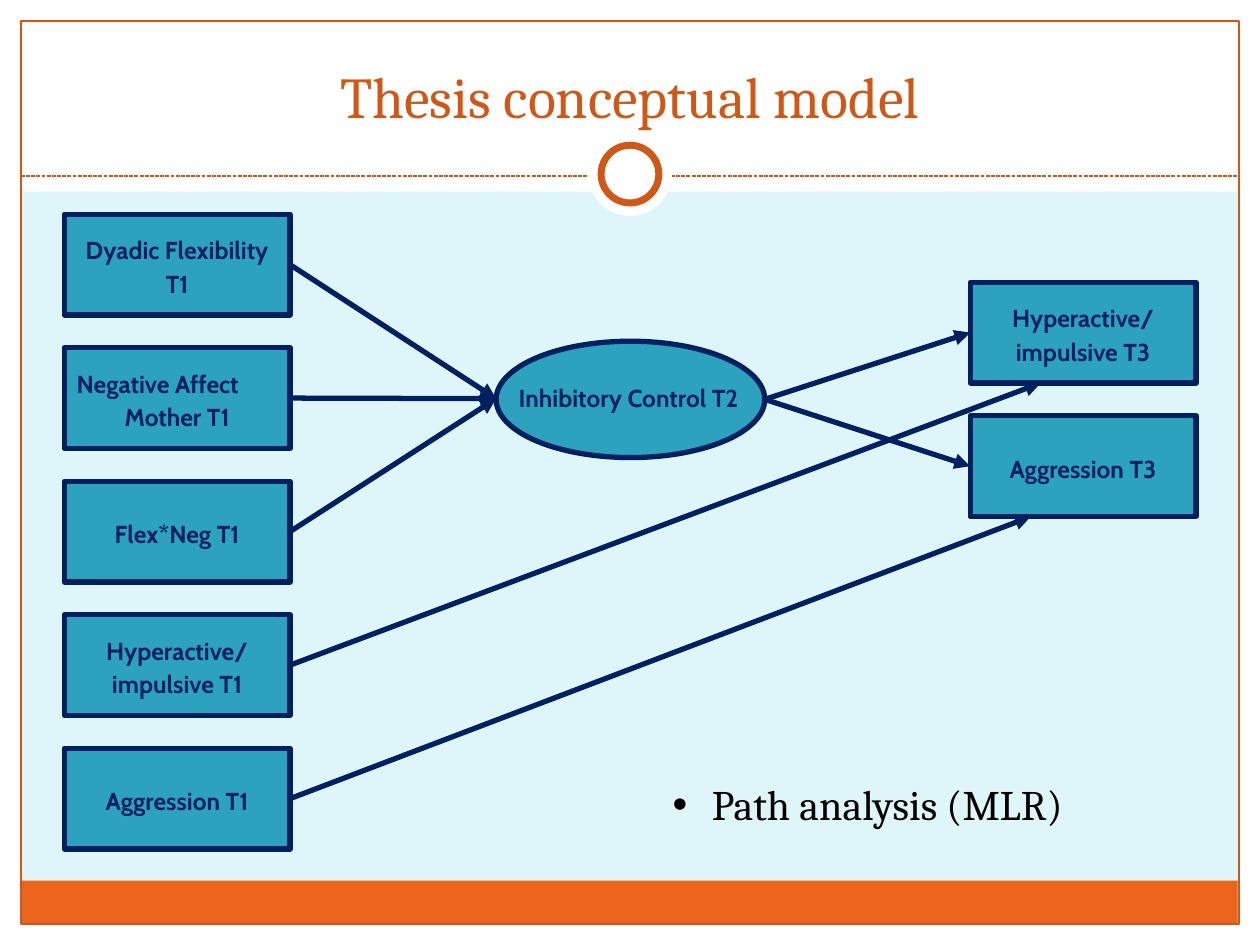
from dataclasses import dataclass

from pptx import Presentation
from pptx.dml.color import RGBColor
from pptx.enum.dml import MSO_LINE
from pptx.enum.shapes import MSO_CONNECTOR, MSO_SHAPE
from pptx.enum.text import MSO_ANCHOR, MSO_AUTO_SIZE, PP_ALIGN
from pptx.oxml.ns import qn
from pptx.util import Pt
from lxml.etree import SubElement


@dataclass(frozen=True)
class Theme:
    background: str = "DEF5FA"
    paper: str = "FFFFFF"
    accent: str = "CF5818"
    footer: str = "EB641B"
    box: str = "2DA2BF"
    ink: str = "002060"
    text: str = "000000"
    heading_font: str = "Cambria"
    label_font: str = "Cabin"
    title_size: float = 33
    note_size: float = 24
    label_size: float = 14
    thin: float = 0.75
    ring: float = 4
    thick: float = 3


def write(frame, text, *, font, size, color, bold=False, aligns=(PP_ALIGN.CENTER,),
          anchor=MSO_ANCHOR.MIDDLE, spacing=None, after=None, bullet=None, indent=22.5):
    """Fill a text frame, one paragraph per line, repeating the last alignment."""
    frame.word_wrap = True
    frame.auto_size = MSO_AUTO_SIZE.NONE
    frame.vertical_anchor = anchor
    frame.text = text
    for number, paragraph in enumerate(frame.paragraphs):
        paragraph.alignment = aligns[min(number, len(aligns) - 1)]
        if spacing:
            paragraph.line_spacing = spacing
        if after:
            paragraph.space_after = Pt(after)
        if bullet:
            properties = paragraph._p.get_or_add_pPr()
            properties.set("marL", str(Pt(indent)))
            properties.set("indent", str(Pt(-indent)))
            SubElement(properties, qn("a:buFont")).set("typeface", "Arial")
            SubElement(properties, qn("a:buChar")).set("char", bullet)
        for run in paragraph.runs:
            run.font.name = font
            run.font.size = Pt(size)
            run.font.bold = bold
            run.font.color.rgb = RGBColor.from_string(color)


class SlideBuilder:
    """Holds the theme and the slide being drawn."""

    def __init__(self, presentation, theme):
        """Add a title-only slide with a plain background."""
        self.theme = theme
        self.slide = presentation.slides.add_slide(presentation.slide_layouts[5])
        fill = self.slide.background.fill
        fill.solid()
        fill.fore_color.rgb = RGBColor.from_string(theme.background)

    def shape(self, kind, bounds, fill=None, line=None, width=0):
        """Draw a preset shape."""
        shape = self.slide.shapes.add_shape(kind, *map(Pt, bounds))
        shape.shadow.inherit = False
        if fill:
            shape.fill.solid()
            shape.fill.fore_color.rgb = RGBColor.from_string(fill)
        else:
            shape.fill.background()
        if line:
            shape.line.color.rgb = RGBColor.from_string(line)
            shape.line.width = Pt(width)
        else:
            shape.line.fill.background()
        return shape

    def line(self, start, end, color, width):
        """Draw a straight connector between two points."""
        connector = self.slide.shapes.add_connector(
            MSO_CONNECTOR.STRAIGHT, *map(Pt, (*start, *end)))
        connector.line.color.rgb = RGBColor.from_string(color)
        connector.line.width = Pt(width)
        SubElement(connector._element.spPr, qn("a:effectLst"))
        return connector

    def arrow(self, start, end, source=None, target=None):
        """Draw an arrow, joined to the right of source and the left of target."""
        connector = self.line(start, end, self.theme.ink, self.theme.thick)
        SubElement(connector.line._get_or_add_ln(), qn("a:tailEnd")).set("type", "triangle")
        if source:
            connector.begin_connect(source, 3)
        if target:
            connector.end_connect(target, 1)

    def label(self, frame, text, **options):
        """Write a bold diagram label."""
        theme = self.theme
        write(frame, text, font=theme.label_font, size=theme.label_size,
              color=theme.ink, bold=True, spacing=1.15, **options)

    def variable(self, text, left, top, aligns=(PP_ALIGN.CENTER,)):
        """Draw a labelled variable box."""
        theme = self.theme
        box = self.shape(MSO_SHAPE.RECTANGLE, (left, top, 129, 57.6),
                         theme.box, theme.ink, theme.thick)
        self.label(box.text_frame, text, aligns=aligns)
        return box

    def text_box(self, bounds):
        """Add an empty text box and return its frame."""
        return self.slide.shapes.add_textbox(*map(Pt, bounds)).text_frame

    def title(self, text, bounds):
        """Place the title placeholder in front of the frame."""
        title = self.slide.shapes.title
        title.left, title.top, title.width, title.height = map(Pt, bounds)
        write(title.text_frame, text, font=self.theme.heading_font,
              size=self.theme.title_size, color=self.theme.accent, anchor=MSO_ANCHOR.BOTTOM)
        self.slide.shapes.element.append(title.element)

    def frame(self):
        """Draw the margins, border, footer band, divider and ring."""
        theme = self.theme
        for bounds in ((0, 528, 720, 12), (0, 0, 720, 109.5),
                       (0, 0, 12, 540), (708, 0, 12, 540)):
            self.shape(MSO_SHAPE.RECTANGLE, bounds, theme.paper)
        self.shape(MSO_SHAPE.RECTANGLE, (11.8, 503.3, 695.5, 24.5), theme.footer)
        self.shape(MSO_SHAPE.RECTANGLE, (12, 12, 696, 516), None, theme.accent, theme.thin)
        divider = self.line((12, 100.6), (708, 100.6), theme.accent, theme.thin)
        divider.line.dash_style = MSO_LINE.SQUARE_DOT
        self.shape(MSO_SHAPE.OVAL, (336, 75.5, 48, 48), theme.paper)
        self.shape(MSO_SHAPE.OVAL, (343.5, 83, 33, 33), theme.paper, theme.accent, theme.ring)


def main():
    """Build the conceptual model slide."""
    theme = Theme()
    presentation = Presentation()
    presentation.slide_width, presentation.slide_height = Pt(720), Pt(540)
    builder = SlideBuilder(presentation, theme)
    builder.frame()
    builder.title("Thesis conceptual model", (24, 18, 672, 60))

    step = 76.3
    centered = (PP_ALIGN.CENTER,)
    predictors = (
        ("Dyadic Flexibility T1", centered),
        ("Negative Affect\nMother T1", (PP_ALIGN.LEFT, PP_ALIGN.CENTER)),
        ("Flex*Neg T1", centered),
        ("Hyperactive/\nimpulsive T1", centered),
        ("Aggression T1", centered),
    )
    sources = [builder.variable(text, 36.7, 122.4 + row * step, aligns)
               for row, (text, aligns) in enumerate(predictors)]
    outcomes = [builder.variable(text, 554.4, 161.3 + row * step)
                for row, text in enumerate(("Hyperactive/\nimpulsive T3", "Aggression T3"))]

    builder.shape(MSO_SHAPE.OVAL, (283.5, 195, 153.5, 66.5), theme.box, theme.ink, theme.thick)
    builder.label(builder.text_box((286.5, 213.1, 145.5, 59.8)), "Inhibitory Control T2",
                  anchor=MSO_ANCHOR.TOP, after=10)

    mediator_left, mediator_right = (283.5, 227.8), (437, 228.2)
    ends = [mediator_left] * 3 + [(594.7, 218.9), (589, 295.2)]
    for source, end in zip(sources, ends):
        builder.arrow((0, 0), end, source=source)
    for outcome in outcomes:
        builder.arrow(mediator_right, (0, 0), target=outcome)

    write(builder.text_box((377.3, 441.4, 316.8, 36)), "Path analysis (MLR)",
          font=theme.heading_font, size=theme.note_size, color=theme.text,
          aligns=(PP_ALIGN.LEFT,), anchor=MSO_ANCHOR.TOP, bullet="•")
    presentation.save("out.pptx")


if __name__ == "__main__":
    main()
